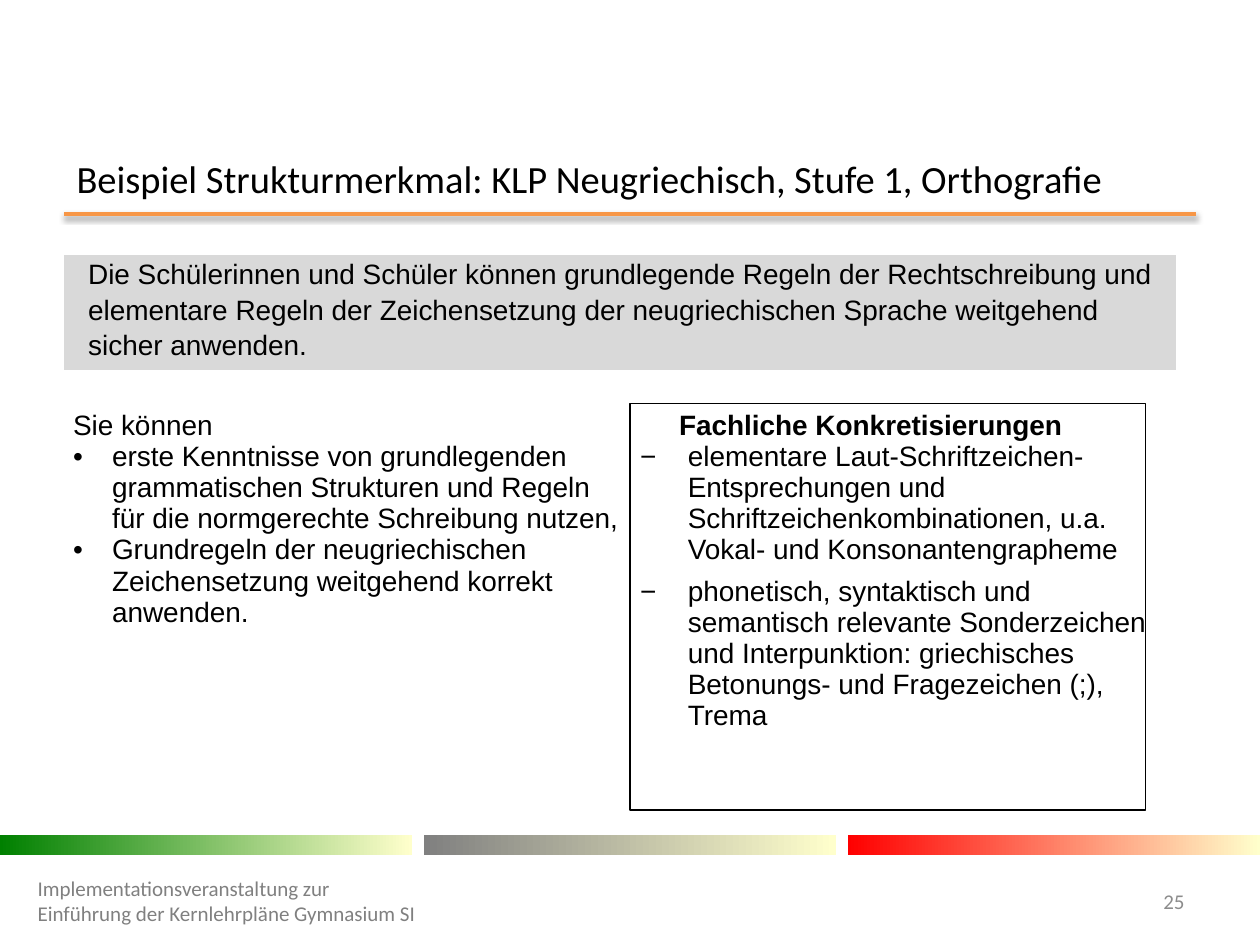
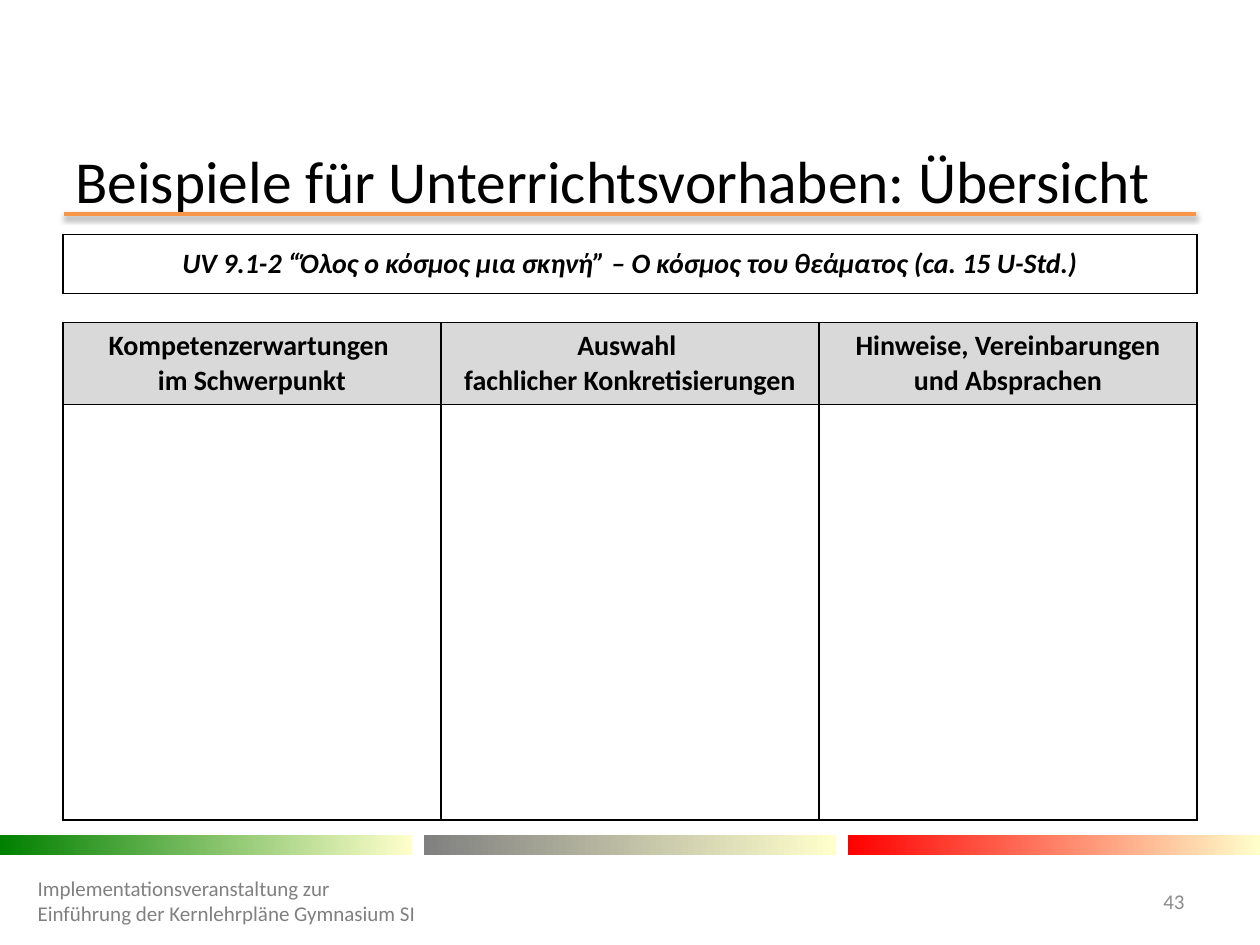
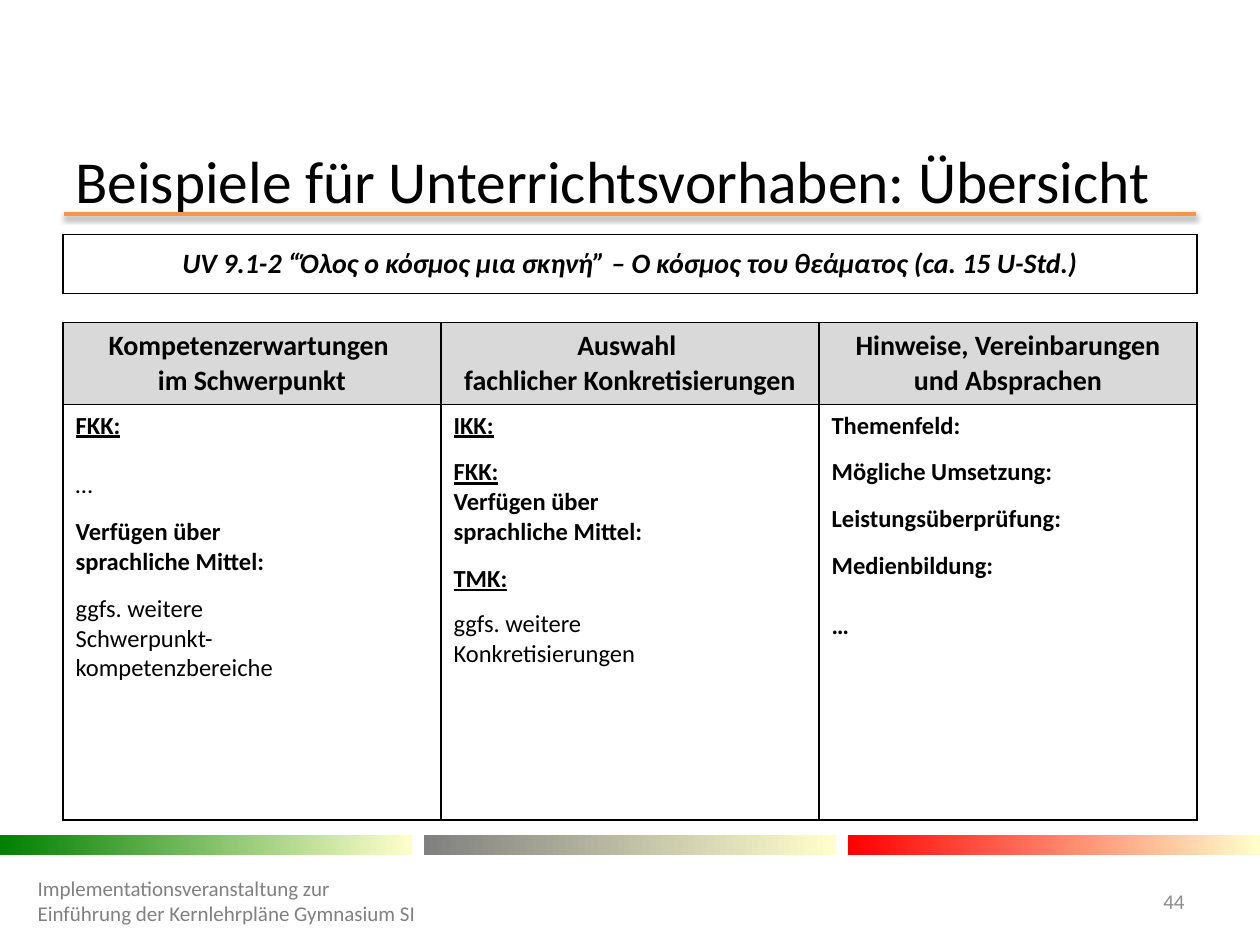
from dataclasses import dataclass

from lxml import etree
from pptx import Presentation
from pptx.dml.color import RGBColor
from pptx.enum.shapes import MSO_CONNECTOR, MSO_SHAPE
from pptx.enum.text import MSO_ANCHOR, PP_ALIGN
from pptx.oxml.ns import qn
from pptx.util import Inches, Pt

RECTANGLE = MSO_SHAPE.RECTANGLE
STRAIGHT = MSO_CONNECTOR.STRAIGHT
MIDDLE = MSO_ANCHOR.MIDDLE
LEFT, CENTER, RIGHT = PP_ALIGN.LEFT, PP_ALIGN.CENTER, PP_ALIGN.RIGHT

COLUMNS, ROWS = 100, 75
UNIT = Inches(0.1)
COLORS = {
    "text": "000000", "rule": "F79646", "panel": "D9D9D9",
    "footer": "808080", "number": "8C8C8C", "fade": "FFFFCC",
    "green": "008000", "gray": "808080", "red": "FF0000",
}
FOOTER = "Implementationsveranstaltung zur Einführung der Kernlehrpläne Gymnasium SI"
OVERVIEW_TITLE = "Beispiele für Unterrichtsvorhaben: Übersicht"
UNIT_TITLE = "UV 9.1-2 “Όλος ο κόσμος μια σκηνή” – Ο κόσμος του θεάματος (ca. 15 U-Std.)"
HEADINGS = [
    "Kompetenzerwartungen \nim Schwerpunkt",
    "Auswahl \nfachlicher Konkretisierungen",
    "Hinweise, Vereinbarungen und Absprachen",
]
MEANS = "Verfügen über \nsprachliche Mittel:"
PLAN = [
    [(0, [("FKK:", "bu")]), (17, [("…", "")]), (9.8, [(MEANS, "b")]),
     (9.8, [("ggfs. weitere \nSchwerpunkt-\nkompetenzbereiche", "")])],
    [(0, [("IKK:", "bu")]), (9.8, [("FKK:\n", "bu"), (MEANS, "b")]),
     (9.8, [("TMK:", "bu")]), (8.5, [("ggfs. weitere \nKonkretisierungen", "")])],
    [(0, [("Themenfeld:", "b")]), (9.8, [("Mögliche Umsetzung:", "b")]),
     (9.8, [("Leistungsüberprüfung:", "b")]), (9.8, [("Medienbildung:", "b")]),
     (17, [("…", "b")])],
]
RULE_STATEMENT = (
    "Die Schülerinnen und Schüler können grundlegende Regeln der Rechtschreibung und "
    "elementare Regeln der Zeichensetzung der neugriechischen Sprache weitgehend sicher anwenden."
)
SKILLS = [
    "erste Kenntnisse von grundlegenden grammatischen Strukturen und Regeln "
    "für die normgerechte Schreibung nutzen,",
    "Grundregeln der neugriechischen Zeichensetzung weitgehend korrekt anwenden.",
]
DETAILS = [
    "elementare Laut-Schriftzeichen-Entsprechungen und Schriftzeichenkombinationen, "
    "u.a. Vokal- und Konsonantengrapheme",
    "phonetisch, syntaktisch und semantisch relevante Sonderzeichen und Interpunktion: "
    "griechisches Betonungs- und Fragezeichen (;), Trema",
]


@dataclass
class Box:
    left: float
    top: float
    width: float
    height: float

    def inner(self, left, top, width, height):
        return Box(self.left + left, self.top + top, width, height)

    def lengths(self):
        return [int(UNIT * side) for side in (self.left, self.top, self.width, self.height)]


PAGE = Box(0, 0, COLUMNS, ROWS)


def color(name):
    return RGBColor.from_string(COLORS[name])


def add_xml(parent, tag, **attributes):
    return etree.SubElement(parent, qn(tag), attributes)


def write(para, spans, size, font="Calibri", ink="text", align=LEFT):
    para.alignment = align
    for text, style in spans:
        for index, line in enumerate(text.split("\n")):
            if index:
                para.add_line_break()
                add_xml(para._p[-1], "a:rPr", sz=str(size * 100))
            if line:
                span = para.add_run()
                span.text = line
                span.font.size, span.font.name = Pt(size), font
                span.font.color.rgb = color(ink)
                span.font.bold, span.font.italic = "b" in style, "i" in style
                span.font.underline = "u" in style
    if not spans:
        add_xml(para._p, "a:endParaRPr", sz=str(size * 100))


def indent(para, margin, bullet=None):
    properties = para._p.get_or_add_pPr()
    properties.set("marL", str(Inches(margin)))
    if bullet:
        properties.set("indent", str(-Inches(margin)))
        add_xml(properties, "a:buFont", typeface="Arial")
        add_xml(properties, "a:buChar", char=bullet)


def add_text(page, box, text, size, ink="text", align=LEFT):
    frame = page.shapes.add_textbox(*box.lengths()).text_frame
    frame.word_wrap = True
    frame.vertical_anchor = MIDDLE
    write(frame.paragraphs[0], [(text, "")], size, ink=ink, align=align)


def add_grid(page, box, widths, heights):
    table = page.shapes.add_table(len(heights), len(widths), *box.lengths()).table
    table.first_row = table.horz_banding = False
    for column, width in zip(table.columns, widths):
        column.width = int(UNIT * width)
    for row, height in zip(table.rows, heights):
        row.height = int(UNIT * height)
    return table


def style_cell(cell, sides="", fill=None):
    properties = cell._tc.get_or_add_tcPr()
    for side in "LRTB":
        border = add_xml(properties, f"a:ln{side}", w=str(Pt(1)))
        if side in sides:
            paint = add_xml(border, "a:solidFill")
            add_xml(paint, "a:srgbClr", val=COLORS["text"])
        else:
            add_xml(border, "a:noFill")
    if fill:
        cell.fill.solid()
        cell.fill.fore_color.rgb = color(fill)
    else:
        cell.fill.background()


def add_title(page, box, text, size):
    add_text(page, box, text, size)
    rule = page.shapes.add_connector(
        STRAIGHT, *[int(UNIT * end) for end in (5.1, 17, COLUMNS - 5.1, 17)])
    rule.line.color.rgb = color("rule")
    rule.line.width = Pt(2)
    effects = add_xml(rule._element.spPr, "a:effectLst")
    shadow = add_xml(effects, "a:outerShdw", blurRad="40000", dist="20000",
                     dir="5400000", rotWithShape="0")
    shade = add_xml(shadow, "a:srgbClr", val=COLORS["text"])
    add_xml(shade, "a:alpha", val="38000")


def add_footer(page, box, number):
    width = 32.7
    pitch = (box.width - width) / 2
    for index, name in enumerate(("green", "gray", "red")):
        band = page.shapes.add_shape(
            RECTANGLE, *box.inner(index * pitch, 0, width, 1.6).lengths())
        band.shadow.inherit = False
        band.line.fill.background()
        band.fill.gradient()
        band.fill.gradient_angle = 0
        for stop, shade, position in zip(band.fill.gradient_stops, (name, "fade"), (0, 1)):
            stop.color.rgb = color(shade)
            stop.position = position
    add_text(page, box.inner(2, 3.2, 32.4, 4), FOOTER, 12, "footer")
    add_text(page, box.inner(88.6, 3.2, 6.4, 4), str(number), 12, "number", RIGHT)


def add_page(deck, title_box, title, size, number):
    page = deck.slides.add_slide(deck.slide_layouts[6])
    add_title(page, title_box, title, size)
    add_footer(page, PAGE.inner(0, 66.3, COLUMNS, 8.7), number)
    return page


def fill_list(cell, heading, style, margin, items, bullet, bullet_margin, gap):
    para = cell.text_frame.paragraphs[0]
    para.line_spacing = 1.15
    indent(para, margin)
    write(para, [(heading, style)], 16, "Arial")
    for item in items:
        para = cell.text_frame.add_paragraph()
        para.space_after = Pt(gap)
        indent(para, bullet_margin, bullet)
        write(para, [(item, "")], 16, "Arial")


def add_orthography(page, box):
    table = add_grid(page, box, (45, 43.2), (8.6, 2.8, 36.7))
    for cell in table.iter_cells():
        cell.margin_left = cell.margin_right = Inches(0.07)
        cell.margin_top = cell.margin_bottom = 0
    for row in range(2):
        table.cell(row, 0).merge(table.cell(row, 1))
    for index, cell in enumerate(table.iter_cells()):
        style_cell(cell, fill="panel" if index < 2 else None)
    para = table.cell(0, 0).text_frame.paragraphs[0]
    para.line_spacing = 1.15
    indent(para, 0.12)
    write(para, [(RULE_STATEMENT, "")], 16, "Arial")
    write(table.cell(1, 0).text_frame.paragraphs[0], [], 12)
    fill_list(table.cell(2, 0), "Sie können", "", 0, SKILLS, "•", 0.31, 0)
    fill_list(table.cell(2, 1), "Fachliche Konkretisierungen", "b", 0.31,
              DETAILS, "−", 0.38, 6)
    frame = page.shapes.add_shape(RECTANGLE, *box.inner(44.9, 11.8, 40.9, 32.3).lengths())
    frame.shadow.inherit = False
    frame.fill.background()
    frame.line.color.rgb = color("text")
    frame.line.width = Pt(0.75)


def add_overview(page, box, plan):
    table = add_grid(page, box, [box.width / 3] * 3, (4.7, 2.3, 6.5, 33))
    table.cell(0, 0).merge(table.cell(0, 2))
    table.cell(1, 0).merge(table.cell(1, 1))
    for index, cell in enumerate(table.iter_cells()):
        row = index // 3
        style_cell(cell, "TB" if row == 1 else "LRTB", "panel" if row == 2 else None)
        if row in (0, 2):
            cell.vertical_anchor = MIDDLE
        if row == 1:
            write(cell.text_frame.paragraphs[0], [], 6)
    write(table.cell(0, 0).text_frame.paragraphs[0], [(UNIT_TITLE, "bi")], 16, align=CENTER)
    for column, heading in enumerate(HEADINGS):
        write(table.cell(2, column).text_frame.paragraphs[0], [(heading, "b")], 16, align=CENTER)
    for column, entries in enumerate(plan):
        frame = table.cell(3, column).text_frame
        for index, (gap, spans) in enumerate(entries):
            para = frame.add_paragraph() if index else frame.paragraphs[0]
            if index:
                para.space_before = Pt(gap)
            write(para, spans, 14)


def main():
    deck = Presentation()
    deck.slide_width, deck.slide_height = UNIT * COLUMNS, UNIT * ROWS
    page = add_page(deck, PAGE.inner(5.1, 12.2, 90, 3.9),
                    "Beispiel Strukturmerkmal: KLP Neugriechisch, Stufe 1, Orthografie", 22, 25)
    add_orthography(page, PAGE.inner(5.1, 20.2, 88.2, 48.1))
    for number, plan in ((43, []), (44, PLAN)):
        page = add_page(deck, PAGE.inner(5, 12.3, 90, 3.9), OVERVIEW_TITLE, 34, number)
        add_overview(page, PAGE.inner(5, 18.6, 90, 46.5), plan)
    deck.save("out.pptx")


if __name__ == "__main__":
    main()
